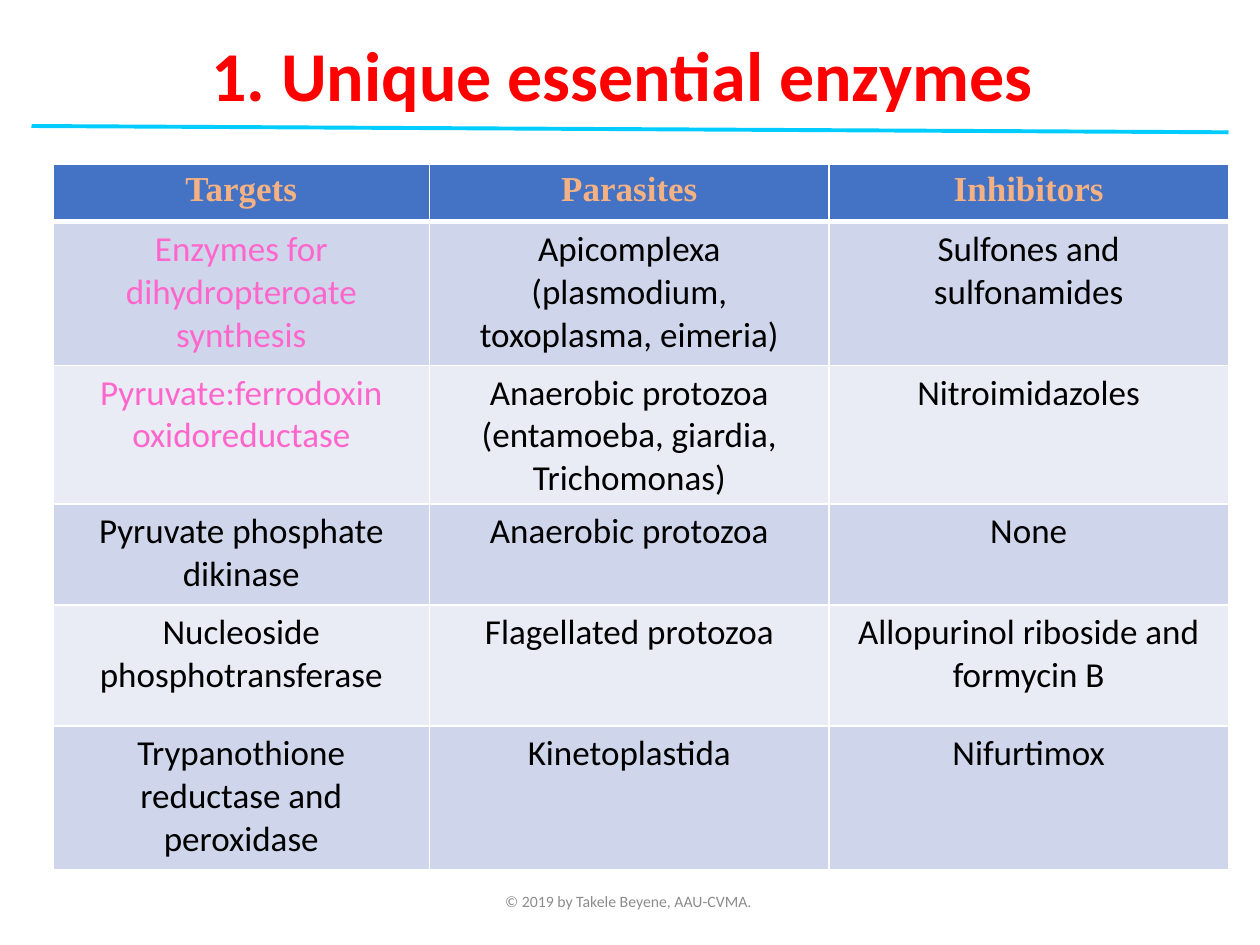
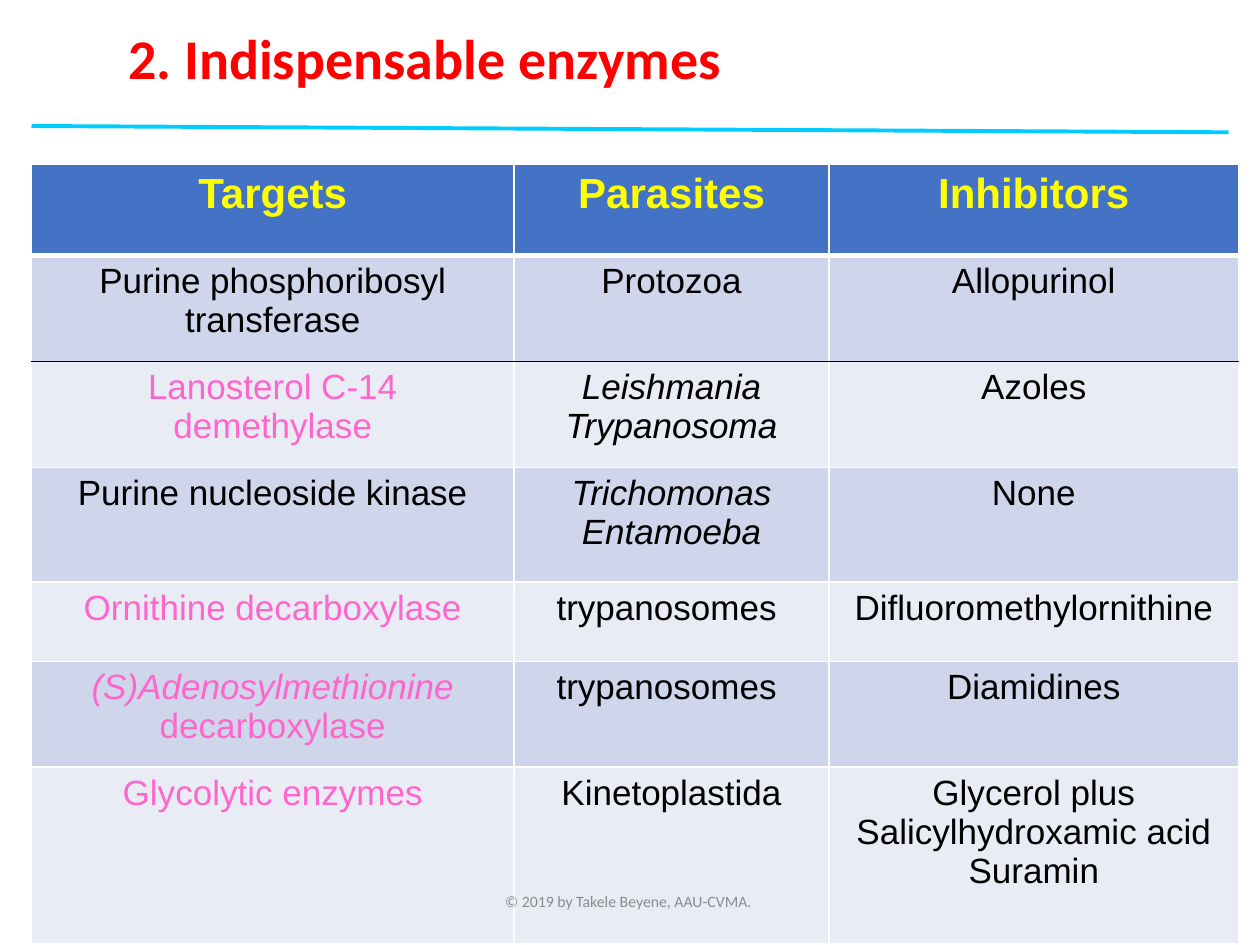
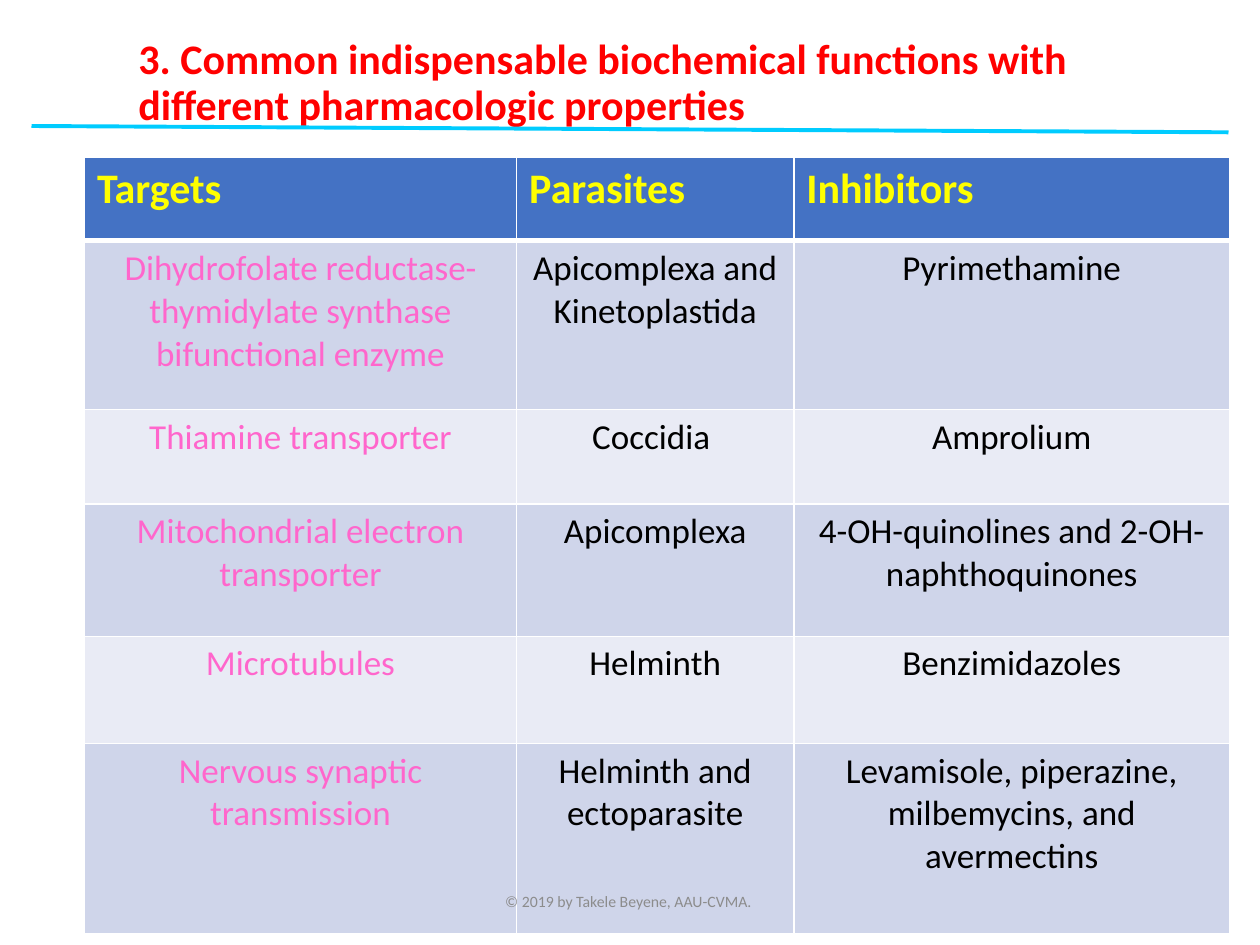
"""Build three slides of enzyme and function targets for antiparasitic drugs."""
import dataclasses
import functools

import lxml.etree
import pptx
import pptx.dml.color
import pptx.enum.shapes
import pptx.enum.text
import pptx.oxml.ns
import pptx.util

Inches = pptx.util.Inches
Pt = pptx.util.Pt
Align = pptx.enum.text.PP_ALIGN
qn = pptx.oxml.ns.qn


@dataclasses.dataclass(frozen=True)
class Theme:
    font: str = "Calibri"
    title: str = "FF0000"
    rule: str = "00CCFF"
    header: str = "4472C4"
    bands: tuple = ("CFD5EA", "E9EBF5")
    grid: str = "FFFFFF"
    text: str = "000000"
    pink: str = "FF66CC"
    yellow: str = "FFFF00"
    peach: str = "F4B183"
    footer: str = "8C8C8C"
    body_size: int = 20
    header_size: int = 24
    footer_size: int = 9


THEME = Theme()


@dataclasses.dataclass
class Span:
    text: str
    color: str = THEME.text
    italic: bool = False


pink = functools.partial(Span, color=THEME.pink)
italic = functools.partial(Span, italic=True)


def rgb(color):
    return pptx.dml.color.RGBColor.from_string(color)


def write(frame, spans, size, font=THEME.font, bold=False, align=Align.LEFT, spacing=None):
    """Fill a text frame with spans; a line feed starts a new paragraph."""
    para = frame.paragraphs[0]
    for span in spans:
        for index, line in enumerate(span.text.split("\n")):
            if index:
                para = frame.add_paragraph()
            run = para.add_run()
            run.text = line
            run.font.name = font
            run.font.size = Pt(size)
            run.font.bold = bold
            run.font.italic = span.italic
            run.font.color.rgb = rgb(span.color)
    for para in frame.paragraphs:
        para.alignment = align
        para.line_spacing = spacing


def set_border(cell, side, color, width):
    properties = cell._tc.get_or_add_tcPr()
    line = lxml.etree.SubElement(properties, qn(f"a:ln{side}"), w=str(Pt(width)))
    fill = lxml.etree.SubElement(line, qn("a:solidFill"))
    lxml.etree.SubElement(fill, qn("a:srgbClr"), val=color)


def as_spans(content):
    if isinstance(content, str):
        return [Span(content)]
    return content if isinstance(content, list) else [content]


class DeckBuilder:
    def __init__(self, theme):
        self.theme = theme
        self.deck = pptx.Presentation()
        self.deck.slide_width = Inches(10)
        self.deck.slide_height = Inches(7.5)
        self.page = None

    def add_page(self):
        self.page = self.deck.slides.add_slide(self.deck.slide_layouts[6])

    def add_text(self, text, left, top, width, height, color, **format):
        box = self.page.shapes.add_textbox(*map(Inches, (left, top, width, height)))
        frame = box.text_frame
        frame.word_wrap = True
        frame.vertical_anchor = pptx.enum.text.MSO_ANCHOR.MIDDLE
        write(frame, [Span(text, color)], **format)

    def add_title(self, text, place, size):
        self.add_text(text, *place, color=self.theme.title, size=size, bold=True, spacing=0.9)

    def add_footer(self):
        self.add_text("© 2019 by Takele Beyene, AAU-CVMA. ", 3.31, 6.95, 3.38, 0.4,
                      color=self.theme.footer, size=self.theme.footer_size, align=Align.CENTER)

    def add_rule(self):
        ends = map(Inches, (0.25, 1, 9.75, 1.05))
        rule = self.page.shapes.add_connector(pptx.enum.shapes.MSO_CONNECTOR.STRAIGHT, *ends)
        rule.line.color.rgb = rgb(self.theme.rule)
        rule.line.width = Pt(2.25)
        lxml.etree.SubElement(rule._element.spPr, qn("a:effectLst"))

    def add_table(self, rows, left, top, widths, heights, header_format, header_color,
                  font=THEME.font, black_edge=None):
        """Add a banded table; black_edge numbers the row edge drawn in black."""
        theme = self.theme
        frame = self.page.shapes.add_table(
            len(heights), len(widths), Inches(left), Inches(top),
            Inches(sum(widths)), Inches(sum(heights)))
        table = frame.table
        for column, width in zip(table.columns, widths):
            column.width = Inches(width)
        for row, height in zip(table.rows, heights):
            row.height = Inches(height)

        def edge(number):
            return theme.text if number == black_edge else theme.grid

        header = [Span(name, header_color) for name in ("Targets", "Parasites", "Inhibitors")]
        for r, row in enumerate([header] + rows):
            for c, content in enumerate(row):
                cell = table.cell(r, c)
                set_border(cell, "L", theme.grid, 1)
                set_border(cell, "R", theme.grid, 1)
                set_border(cell, "T", edge(r), 3 if r == 1 else 1)
                set_border(cell, "B", edge(r + 1), 3 if r == 0 else 1)
                cell.fill.solid()
                cell.fill.fore_color.rgb = rgb(theme.bands[(r - 1) % 2] if r else theme.header)
                style = {"size": theme.body_size, "font": font, "align": Align.CENTER}
                if r == 0:
                    style.update(header_format, bold=True)
                write(cell.text_frame, as_spans(content), **style)

    def add_target_page(self, title, title_place, title_size, **table):
        self.add_page()
        self.add_title(title, title_place, title_size)
        self.add_table(**table)
        self.add_footer()
        self.add_rule()


UNIQUE_ENZYMES = [
    [pink("Enzymes for dihydropteroate\nsynthesis"),
     "Apicomplexa (plasmodium, toxoplasma, eimeria)", "Sulfones and sulfonamides"],
    [pink("Pyruvate:ferrodoxin oxidoreductase"),
     "Anaerobic protozoa (entamoeba, giardia, Trichomonas)", "Nitroimidazoles"],
    ["Pyruvate phosphate dikinase", "Anaerobic protozoa", "None"],
    ["Nucleoside phosphotransferase", "Flagellated protozoa",
     "Allopurinol riboside and\nformycin B"],
    ["Trypanothione reductase and\nperoxidase", "Kinetoplastida", "Nifurtimox"],
]

INDISPENSABLE_ENZYMES = [
    ["Purine phosphoribosyl transferase", "Protozoa", "Allopurinol"],
    [pink("Lanosterol C-14 demethylase"), italic("Leishmania\nTrypanosoma"), "Azoles"],
    ["Purine nucleoside kinase", italic("Trichomonas\nEntamoeba"), "None"],
    [pink("Ornithine decarboxylase"), "trypanosomes ", "Difluoromethylornithine"],
    [[pink("(S)Adenosylmethionine ", italic=True), pink("decarboxylase")],
     "trypanosomes ", "Diamidines"],
    [pink("Glycolytic enzymes"), "Kinetoplastida",
     "Glycerol plus\nSalicylhydroxamic acid\nSuramin"],
]

COMMON_FUNCTIONS = [
    [pink("Dihydrofolate reductase-thymidylate synthase bifunctional enzyme"),
     "Apicomplexa and\nKinetoplastida", "Pyrimethamine"],
    [pink("Thiamine transporter"), "Coccidia ", "Amprolium"],
    [pink("Mitochondrial electron transporter"), "Apicomplexa",
     "4-OH-quinolines and 2-OH-naphthoquinones"],
    [pink("Microtubules"), "Helminth", "Benzimidazoles"],
    [pink("Nervous synaptic transmission"), "Helminth and\nectoparasite",
     "Levamisole, piperazine,\nmilbemycins, and avermectins"],
]


def main():
    builder = DeckBuilder(THEME)
    builder.add_target_page(
        "1. Unique essential enzymes", (1.58, 0.25, 8.17, 0.75), 40,
        rows=UNIQUE_ENZYMES, left=0.42, top=1.3, widths=[2.99, 3.17, 3.17],
        heights=[0.46, 1.14, 1.06, 0.8, 0.96, 1.14],
        header_format={"font": "Times New Roman"}, header_color=THEME.peach)
    builder.add_target_page(
        "2. Indispensable enzymes", (0.92, 0.15, 8.17, 0.67), 32,
        rows=INDISPENSABLE_ENZYMES, left=0.25, top=1.3, widths=[3.83, 2.5, 3.25],
        heights=[0.73, 0.84, 0.84, 0.91, 0.63, 0.84, 1.4], font="Arial", black_edge=2,
        header_format={"size": THEME.header_size}, header_color=THEME.yellow)
    builder.add_target_page(
        "3. Common indispensable biochemical functions with different pharmacologic properties",
        (1, 0.25, 8.75, 0.83), 24,
        rows=COMMON_FUNCTIONS, left=0.67, top=1.25, widths=[3.43, 2.2, 3.46],
        heights=[0.66, 1.34, 0.75, 1.05, 0.85, 1.51],
        header_format={"size": THEME.header_size, "align": Align.LEFT},
        header_color=THEME.yellow)
    builder.deck.save("out.pptx")


if __name__ == "__main__":
    main()
